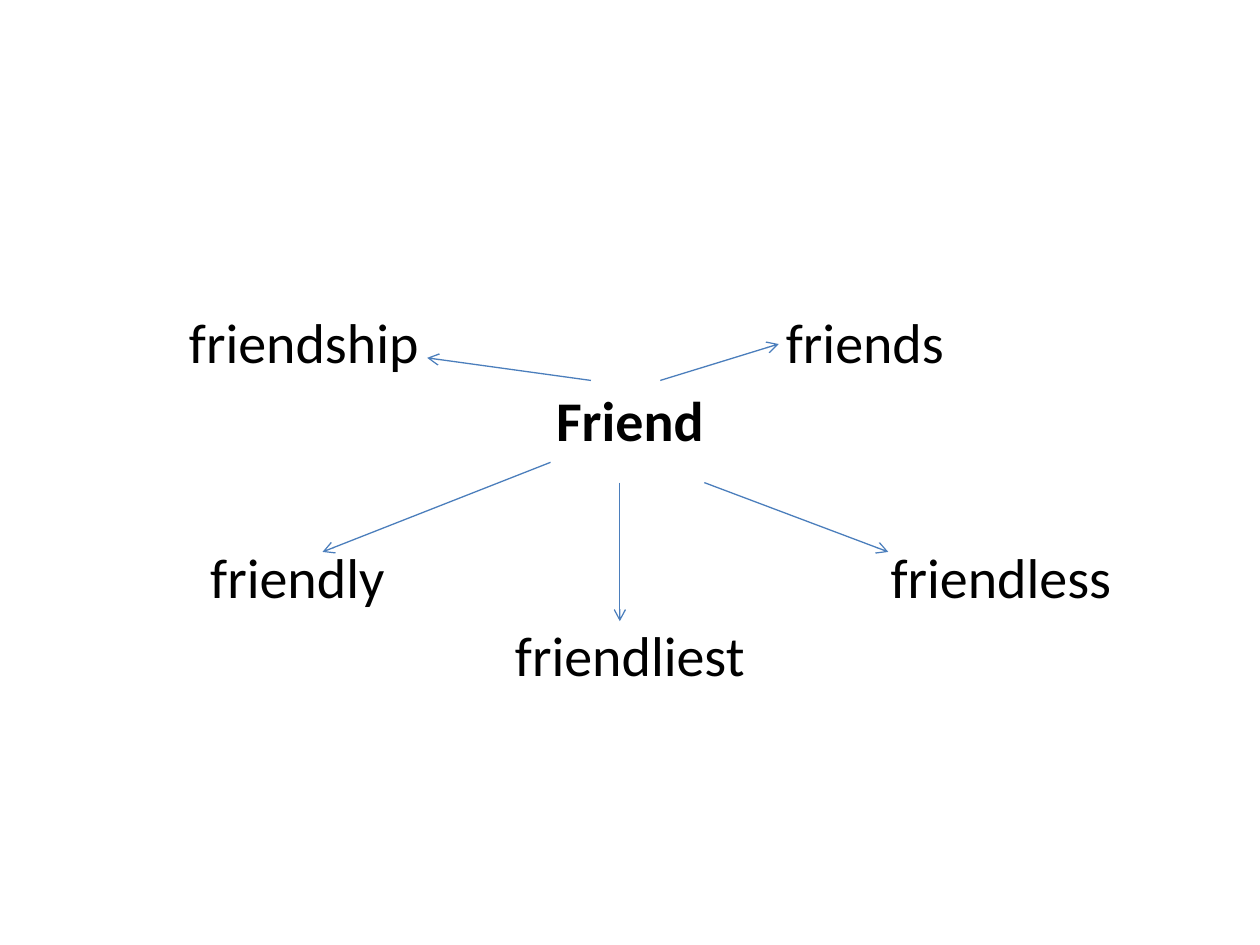
from pptx import Presentation
from pptx.dml.color import RGBColor as RGB
from pptx.enum.shapes import MSO_CONNECTOR as Link
from pptx.enum.text import MSO_ANCHOR as Anchor, PP_ALIGN as Align
from pptx.oxml.ns import qn
from pptx.util import Pt
from lxml.etree import SubElement as Sub

# word, row, centre x, bold
WORDS = [
    ("friendship", 0, 173.7, False),
    ("friends", 0, 494.3, False),
    ("Friend", 1, 360, True),
    ("friendly", 3, 170, False),
    ("friendless", 3, 572, False),
    ("friendliest", 4, 360, False),
]

# start and end of each arrow, leading away from the root word
ARROWS = [
    ((377.3, 217.4), (445, 196.6)),
    ((337.7, 217.4), (244.1, 204.5)),
    ((314.6, 264.2), (184.3, 315.4)),
    ((354.2, 275.8), (354.2, 355)),
    ((402.5, 275.8), (507.6, 315.4)),
]

THEME = {
    "font": "Calibri",
    "size": Pt(32),
    "ink": RGB(0, 0, 0),
    "line": RGB(0x4B, 0x7E, 0xBC),
    "weight": Pt(0.75),
}
TOP, PITCH = 175.8, 44.75
WIDE, HIGH = 170, 39


def add_word(slide, word, row, mid, bold):
    box = slide.shapes.add_textbox(
        Pt(mid - WIDE / 2), Pt(TOP + row * PITCH), Pt(WIDE), Pt(HIGH))
    frame = box.text_frame
    frame.word_wrap = True
    frame.vertical_anchor = Anchor.TOP
    frame.margin_left = frame.margin_right = 0
    frame.margin_top = frame.margin_bottom = 0
    para = frame.paragraphs[0]
    para.text = word
    para.alignment = Align.CENTER
    font = para.font
    font.name, font.size = THEME["font"], THEME["size"]
    font.bold = bold
    font.color.rgb = THEME["ink"]


def add_arrow(slide, start, end):
    ends = [Pt(n) for n in (*start, *end)]
    arrow = slide.shapes.add_connector(Link.STRAIGHT, *ends)
    arrow.line.color.rgb = THEME["line"]
    arrow.line.width = THEME["weight"]
    Sub(arrow.line._get_or_add_ln(), qn("a:tailEnd"), type="arrow")
    Sub(arrow._element.spPr, qn("a:effectLst"))


def main():
    deck = Presentation()
    deck.slide_width, deck.slide_height = Pt(720), Pt(540)
    slide = deck.slides.add_slide(deck.slide_layouts[6])
    for item in WORDS:
        add_word(slide, *item)
    for start, end in ARROWS:
        add_arrow(slide, start, end)
    deck.save("out.pptx")


if __name__ == "__main__":
    main()
